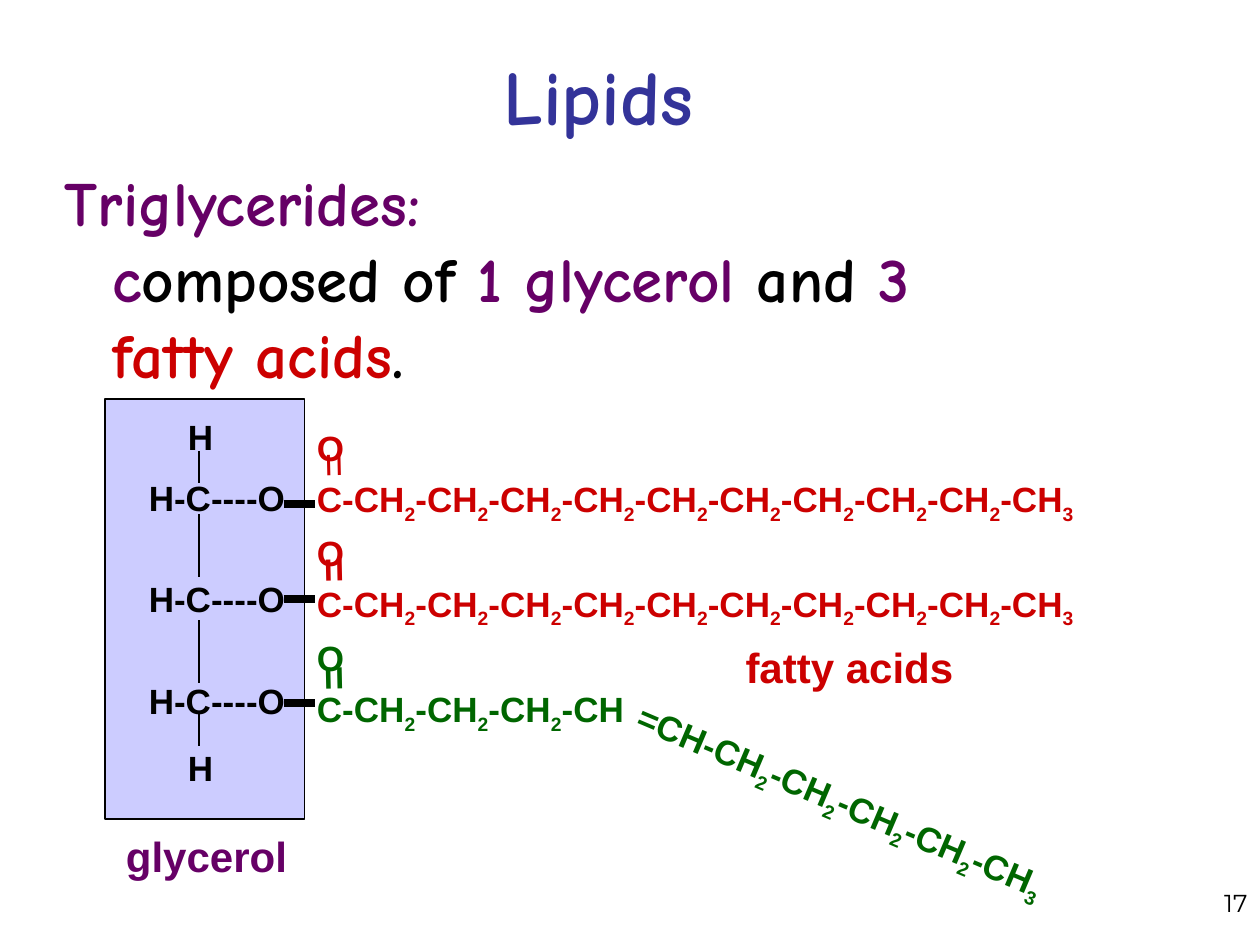
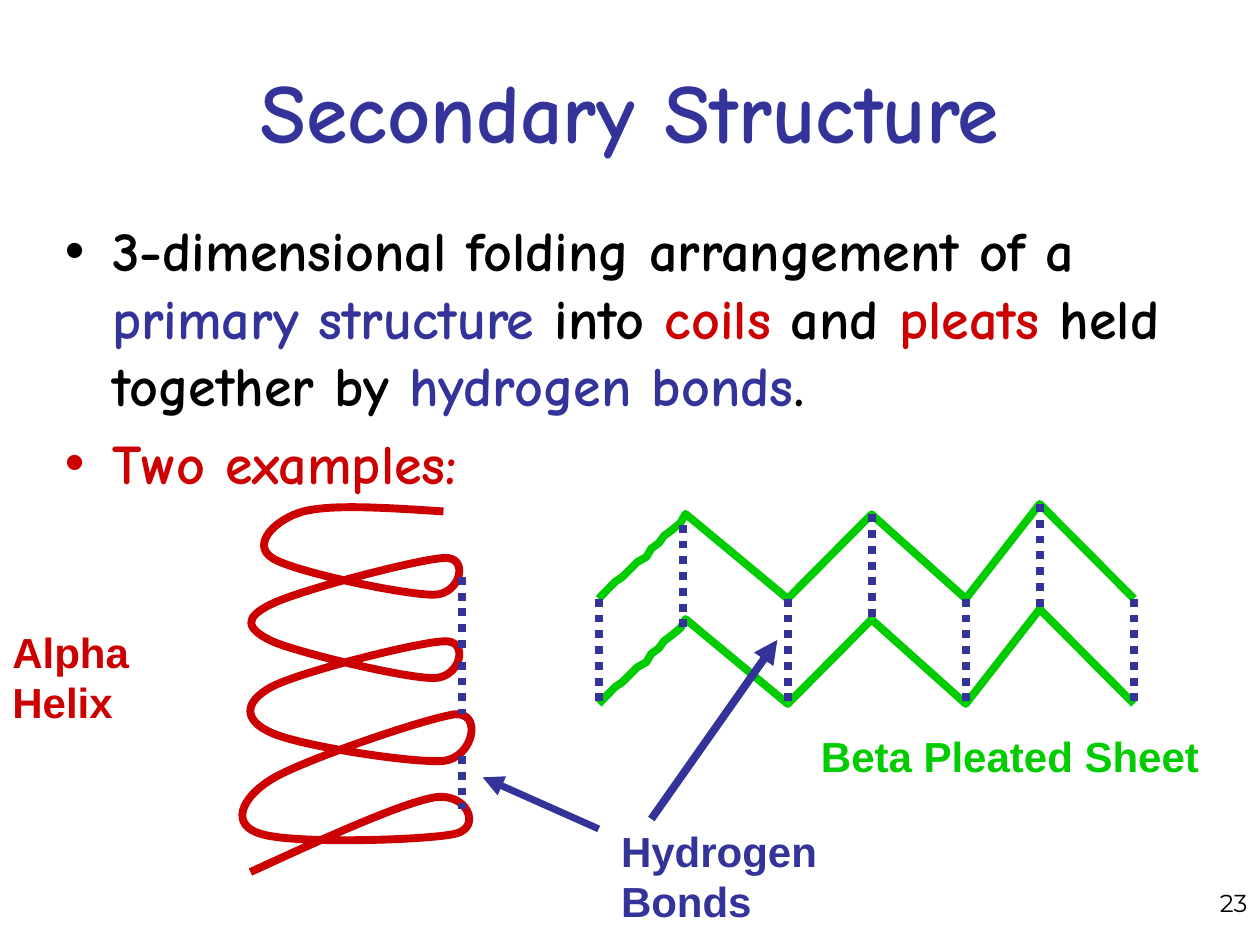
from itertools import groupby

from lxml.etree import SubElement
from pptx import Presentation
from pptx.dml.color import RGBColor
from pptx.enum.dml import MSO_LINE
from pptx.enum.shapes import MSO_CONNECTOR, MSO_SHAPE
from pptx.enum.text import MSO_ANCHOR, MSO_AUTO_SIZE, PP_ALIGN
from pptx.oxml.ns import qn
from pptx.util import Cm, Pt

HUES = {
    "black": "000000", "blue": "333399", "purple": "660066", "red": "CC0000",
    "green": "006600", "lime": "00CC00", "lilac": "CCCCFF",
}
HEAD, LABEL, FOOT = "Comic Neue", "Arial", "Montserrat"
BREAK = "\v"
HANG = 0.95

# Lipids: every digit in a formula is a subscript
FAT = [[
    ("Triglycerides:", "purple"), (BREAK, None), ("c", "purple"),
    ("omposed of ", "black"), ("1 glycerol", "purple"), (" and ", "black"),
    ("3", "purple"), (BREAK, None), ("fatty acids", "red"), (".", "black"),
]]
BASE = [  # text, space before in pt, indent
    ("H", 0, 0.79), ("H-C----O", 10.8, 0), ("H-C----O", 33.8, 0),
    ("H-C----O", 33.8, 0), ("H", 14.4, 0.79),
]
STEMS = [(9.1, 9.74), (10.36, 11.63), (12.5, 13.77), (14.4, 15.04)]
LONG = "C" + "-CH2" * 9 + "-CH3"
CHAINS = [  # formula, hue, top, top of the double bond, link height, bold bond
    (LONG, "red", 8.47, 8.76, 10.16, False),
    (LONG, "red", 10.58, 10.87, 12.07, True),
    ("C" + "-CH2" * 3 + "-CH", "green", 12.7, 13.06, 14.18, True),
]
KINK = "=CH" + "-CH2" * 4 + "-CH3"

# Secondary Structure
FOLD = [
    [("3-dimensional folding arrangement of a ", "black"),
     ("primary structure", "blue"), (" into ", "black"), ("coils", "red"),
     (" and ", "black"), ("pleats", "red"), (" held together by ", "black"),
     ("hydrogen bonds", "blue"), (".", "black")],
    [("Two examples:", "red")],
]
HELIX = [  # a start, then two control points and an end point for each curve
    (8.94, 10.31),
    (7.82, 10.24), (6.71, 10.16), (6.12, 10.31),
    (5.56, 10.46), (5.05, 10.97), (5.49, 11.25),
    (5.92, 11.53), (8.15, 11.99), (8.74, 11.99),
    (9.3, 11.99), (9.47, 11.2), (8.94, 11.25),
    (8.41, 11.28), (6.07, 11.89), (5.49, 12.17),
    (4.9, 12.45), (4.95, 12.67), (5.49, 12.93),
    (6.02, 13.16), (8.15, 13.67), (8.74, 13.67),
    (9.3, 13.67), (9.47, 12.88), (8.94, 12.93),
    (8.41, 12.95), (6.07, 13.54), (5.49, 13.84),
    (4.9, 14.15), (4.9, 14.53), (5.49, 14.78),
    (6.07, 15.04), (8.33, 15.39), (8.94, 15.34),
    (9.55, 15.27), (9.73, 14.35), (9.17, 14.4),
    (8.59, 14.48), (6.12, 15.32), (5.49, 15.7),
    (4.83, 16.1), (4.65, 16.64), (5.26, 16.81),
    (5.89, 17.02), (8.59, 16.94), (9.17, 16.81),
    (9.73, 16.69), (9.42, 15.95), (8.74, 16.08),
    (8.05, 16.21), (6.55, 16.89), (5.05, 17.58),
]
RISE = [
    (12.07, 12.07), (12.4, 11.73), (12.55, 11.63), (12.85, 11.33),
    (13.03, 11.23), (13.13, 11.06), (13.28, 10.95), (13.39, 10.8),
    (13.54, 10.69), (13.72, 10.54), (13.82, 10.36),
]
FOLDS = [(15.88, 12.07), (17.57, 10.37), (19.47, 12.07),
         (20.96, 10.16), (22.86, 12.07)]
DROP = 2.12  # from the upper strand to the lower one
COIL = [(11.63, 13.13), (13.34, 14.4), (15.24, 16.31)]
ARROWS = [((12.07, 16.71), (9.73, 15.67), 4),
          ((13.13, 16.51), (15.67, 12.9), 4.5)]


def tint(hue):
    return RGBColor.from_string(HUES[hue])


def style(font, face, size, hue, bold=True):
    font.name, font.size, font.bold = face, Pt(size), bold
    font.color.rgb = tint(hue)


def box(slide, left, top, width, height):
    item = slide.shapes.add_textbox(Cm(left), Cm(top), Cm(width), Cm(height))
    item.text_frame.word_wrap = True
    return item


def label(slide, text, hue, left, top, width, bold=True):
    item = box(slide, left, top, width, 1.27)
    item.text_frame.text = text
    style(item.text_frame.paragraphs[0].runs[0].font, LABEL, 24, hue, bold)
    return item


def formula(para, text, hue):
    for low, part in groupby(text, str.isdigit):
        run = para.add_run()
        run.text = "".join(part)
        style(run.font, LABEL, 19 if low else 20, hue)
        if low:
            run.font._element.set("baseline", "-25000")


def prose(slide, paras, place, size, mark=None):
    frame = box(slide, *place).text_frame
    for i, parts in enumerate(paras):
        para = frame.add_paragraph() if i else frame.paragraphs[0]
        if i:
            para.space_before = Pt(size * 0.2)
        props = para._p.get_or_add_pPr()
        props.set("marL", str(Cm(HANG)))
        props.set("indent", str(-Cm(HANG)))
        if mark:
            SubElement(props, qn("a:buFont"), typeface=LABEL)
            SubElement(props, qn("a:buChar"), char=mark)
        for text, hue in parts:
            if text == BREAK:
                para.add_line_break()
                continue
            run = para.add_run()
            run.text = text
            style(run.font, HEAD, size, hue)


def line(slide, start, end, hue="black", width=1.0, dots=False, arrow=False):
    item = slide.shapes.add_connector(
        MSO_CONNECTOR.STRAIGHT, *(Cm(v) for v in (*start, *end)))
    item.line.color.rgb = tint(hue)
    item.line.width = Pt(width)
    if dots:
        item.line.dash_style = MSO_LINE.ROUND_DOT
    props = item._element.spPr
    if arrow:
        SubElement(props.find(qn("a:ln")), qn("a:tailEnd"), type="triangle")
    SubElement(props, qn("a:effectLst"))


def strand(slide, points, hue):
    spots = [(Cm(x), Cm(y)) for x, y in points]
    pen = slide.shapes.build_freeform(*spots[0])
    pen.add_line_segments(spots[1:], close=False)
    item = pen.convert_to_shape()
    item.shadow.inherit = False
    item.fill.background()
    item.line.color.rgb = tint(hue)
    item.line.width = Pt(4.5)
    return item


def bend(item):
    """Turn each three straight segments into one cubic curve."""
    track = next(item._element.iter(qn("a:path")))
    legs = track.findall(qn("a:lnTo"))
    for i in range(0, len(legs), 3):
        curve = SubElement(track, qn("a:cubicBezTo"))
        for leg in legs[i:i + 3]:
            curve.append(leg[0])
            track.remove(leg)


def page(deck, title, place, size, number):
    slide = deck.slides.add_slide(deck.slide_layouts[5])
    head = slide.shapes.title
    head.left, head.top, head.width, head.height = (Cm(v) for v in place)
    frame = head.text_frame
    frame.text = title
    frame.auto_size = MSO_AUTO_SIZE.NONE
    frame.vertical_anchor = MSO_ANCHOR.MIDDLE
    para = frame.paragraphs[0]
    para.alignment = PP_ALIGN.CENTER
    style(para.runs[0].font, HEAD, size, "blue")
    foot = box(slide, 20.12, 17.78, 5.28, 1.27).text_frame
    foot.text = number
    foot.paragraphs[0].alignment = PP_ALIGN.RIGHT
    style(foot.paragraphs[0].runs[0].font, FOOT, 14, "black", False)
    return slide


def lipids(deck):
    slide = page(deck, "Lipids", (2.12, 1.06, 19.9, 1.69), 44, "17")
    prose(slide, FAT, (1.06, 3.18, 22.23, 11.43), 36)
    back = slide.shapes.add_shape(
        MSO_SHAPE.RECTANGLE, Cm(2.12), Cm(8.05), Cm(4.02), Cm(8.46))
    back.shadow.inherit = False
    back.fill.solid()
    back.fill.fore_color.rgb = tint("lilac")
    back.line.color.rgb = tint("black")
    back.line.width = Pt(1)
    frame = box(slide, 2.75, 8.26, 3.8, 7.75).text_frame
    for i, (text, gap, inset) in enumerate(BASE):
        para = frame.add_paragraph() if i else frame.paragraphs[0]
        formula(para, text, "black")
        para._p.get_or_add_pPr().set("marL", str(Cm(inset)))
        if gap:
            para.space_before = Pt(gap)
    for top, end in STEMS:
        line(slide, (4.02, top), (4.02, end))
    label(slide, "glycerol", "purple", 2.29, 16.61, 4.2)
    for text, hue, top, twin, link, bold in CHAINS:
        frame = box(slide, 6.14, top, 16.8, 2.16).text_frame
        formula(frame.paragraphs[0], "O", hue)
        para = frame.add_paragraph()
        formula(para, text, hue)
        para.space_before = Pt(5.5)
        label(slide, "=", hue, 6.28, twin, 1.02, bold).rotation = 88.7
        line(slide, (5.72, link), (6.35, link), width=4.5)
    label(slide, "fatty acids", "red", 14.78, 12.8, 5)
    kink = box(slide, 12.28, 15.67, 9.73, 1.09)
    formula(kink.text_frame.paragraphs[0], KINK, "green")
    kink.rotation = 23.1


def second(deck):
    slide = page(deck, "Secondary Structure", (1.9, 1.06, 21.59, 2.33), 48, "23")
    prose(slide, FOLD, (1.06, 4.23, 23.5, 11.43), 32, "•")
    label(slide, "Alpha Helix", "red", 0, 12.5, 3.4)
    bend(strand(slide, HELIX, "red"))
    for top, end in COIL:
        line(slide, (9.32, top), (9.32, end), "blue", 4.5, dots=True)
    label(slide, "Beta Pleated Sheet", "lime", 16.3, 14.6, 8.5)
    pleat = RISE + FOLDS
    for shift in (0, DROP):
        strand(slide, [(x, y + shift) for x, y in pleat], "lime")
    for x, y in [RISE[0], (13.76, 10.58), *FOLDS]:
        line(slide, (x, y), (x, y + DROP), "blue", 4.5, dots=True)
    label(slide, "Hydrogen Bonds", "blue", 12.27, 16.51, 5)
    for start, end, width in ARROWS:
        line(slide, start, end, "blue", width, arrow=True)


def main():
    deck = Presentation()
    deck.slide_width, deck.slide_height = Cm(25.4), Cm(19.05)
    lipids(deck)
    second(deck)
    deck.save("out.pptx")


if __name__ == "__main__":
    main()
